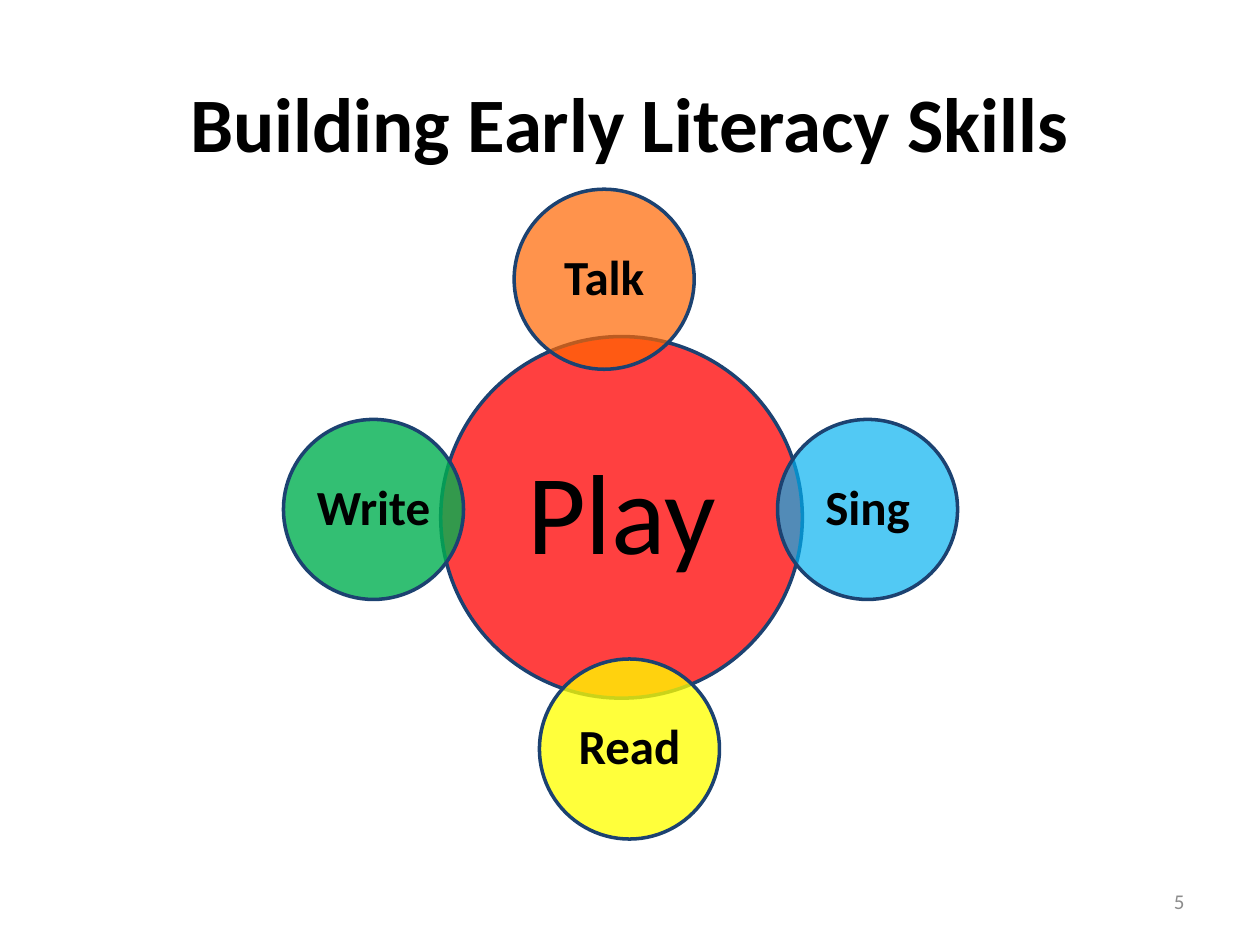
from lxml import etree
from pptx import Presentation
from pptx.dml.color import RGBColor
from pptx.enum.shapes import MSO_SHAPE
from pptx.enum.text import MSO_ANCHOR, PP_ALIGN
from pptx.oxml.ns import qn
from pptx.util import Cm, Pt

OVAL = MSO_SHAPE.OVAL
MIDDLE = MSO_ANCHOR.MIDDLE
CENTER, RIGHT = PP_ALIGN.CENTER, PP_ALIGN.RIGHT
FONT, BLACK, EDGE = "Calibri", "000000", "1C4271"

TITLE = "Building Early Literacy Skills"
NUMBER = "5"
HUB = ("Play", 12.53, 10.43, "FF0000", 75)
SKILLS = [
    ("Talk", 12.18, 5.63, "FF6600", 70),
    ("Sing", 17.49, 10.27, "00B0F0", 68),
    ("Read", 12.69, 15.1, "FFFF00", 77),
    ("Write", 7.53, 10.27, "00B050", 80),
]


def paint(target, color):
    target.rgb = RGBColor.from_string(color)


def write(shape, text, size, color=BLACK, bold=False, align=CENTER):
    frame = shape.text_frame
    frame.text = text
    frame.word_wrap = True
    frame.vertical_anchor = MIDDLE
    para = frame.paragraphs[0]
    para.alignment = align
    font = para.runs[0].font
    font.name, font.size, font.bold = FONT, Pt(size), bold
    paint(font.color, color)
    return frame


def add_disc(slide, item, width, size, bold, inset):
    text, x, y, color, alpha = item
    disc = slide.shapes.add_shape(
        OVAL, Cm(x - width / 2), Cm(y - width / 2), Cm(width), Cm(width))
    disc.shadow.inherit = False
    disc.fill.solid()
    paint(disc.fill.fore_color, color)
    tint = disc.element.spPr.find(qn("a:solidFill"))[0]
    etree.SubElement(tint, qn("a:alpha")).set("val", str(alpha * 1000))
    disc.line.width = Pt(2)
    paint(disc.line.color, EDGE)
    frame = write(disc, text, size, bold=bold)
    frame.word_wrap = False
    frame.margin_left = frame.margin_right = Cm(inset)
    frame.margin_top = frame.margin_bottom = Cm(inset)
    frame.paragraphs[0].line_spacing = 0.9


def main():
    """Build the early literacy slide."""
    deck = Presentation()
    deck.slide_width, deck.slide_height = Cm(25.4), Cm(19.05)
    slide = deck.slides.add_slide(deck.slide_layouts[5])

    title = slide.shapes.title
    title.left, title.top = Cm(1.27), Cm(1.47)
    title.width, title.height = Cm(22.86), Cm(1.98)
    write(title, TITLE, 44, bold=True)

    add_disc(slide, HUB, 7.29, 65, False, 0.23)
    for skill in SKILLS:
        add_disc(slide, skill, 3.63, 28, True, 0.1)

    page = slide.shapes.add_textbox(Cm(18.2), Cm(17.66), Cm(5.93), Cm(1.01))
    write(page, NUMBER, 12, "8C8C8C", align=RIGHT)
    deck.save("out.pptx")


if __name__ == "__main__":
    main()
